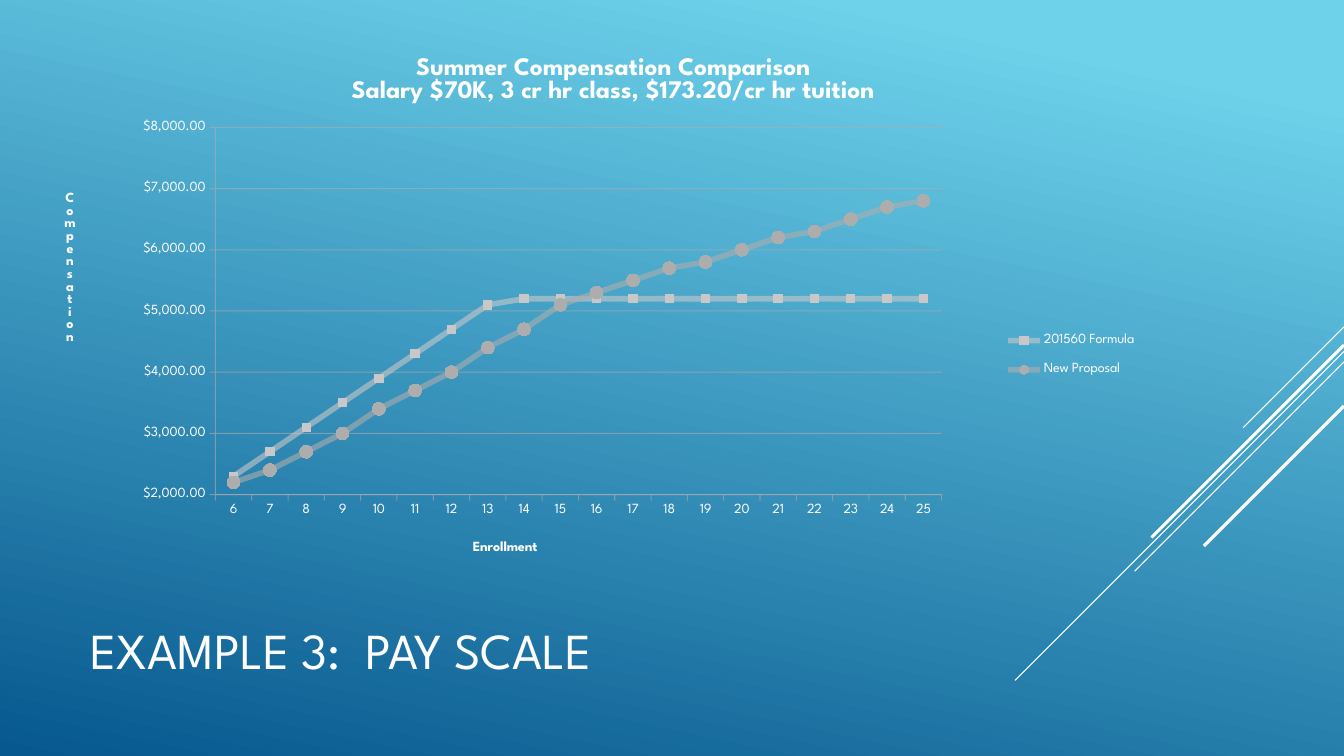
"""Build the pay scale slide with its summer compensation line chart."""
from lxml.etree import SubElement
from pptx import Presentation
from pptx.chart.data import CategoryChartData
from pptx.dml.color import RGBColor
from pptx.enum.chart import XL_CHART_TYPE as CT, XL_LEGEND_POSITION as LP
from pptx.enum.chart import XL_MARKER_STYLE as MS, XL_TICK_MARK as TM
from pptx.enum.shapes import MSO_CONNECTOR
from pptx.enum.text import MSO_ANCHOR, MSO_AUTO_SIZE, PP_ALIGN
from pptx.oxml.ns import qn
from pptx.util import Pt

FONT = "League Spartan"
WHITE = RGBColor(0xFF, 0xFF, 0xFF)
SKY = RGBColor(0x6E, 0xD2, 0xEB)
NAVY = RGBColor(0x06, 0x58, 0x8E)
SILVER = RGBColor(0xC8, 0xC8, 0xC8)
GRAY = RGBColor(0xAD, 0xAD, 0xAD)


def set_font(font, size, bold=False):
    font.name, font.size, font.bold = FONT, Pt(size), bold
    font.color.rgb = WHITE


def place(el, **fractions):
    old = el.find(qn("c:layout"))
    if old is not None:
        el.remove(old)
    is_plot = el.tag == qn("c:plotArea")
    layout = SubElement(el, qn("c:layout"))
    el.insert(0 if is_plot else 1, layout)
    manual = SubElement(layout, qn("c:manualLayout"))
    if is_plot:
        SubElement(manual, qn("c:layoutTarget")).set("val", "inner")
    for key in ("x", "y"):
        SubElement(manual, qn(f"c:{key}Mode")).set("val", "edge")
    for key, value in fractions.items():
        SubElement(manual, qn(f"c:{key}")).set("val", str(value))


prs = Presentation()
prs.slide_width, prs.slide_height = Pt(960), Pt(540)
s = prs.slides.add_slide(prs.slide_layouts[5])

fill = s.background.fill
fill.gradient()
fill.gradient_angle = 360 - 102
for stop, color, position in zip(fill.gradient_stops, (SKY, NAVY), (0.1, 1)):
    stop.color.rgb, stop.position = color, position

for top, run, width in ((233.5, 72, 0.75), (251, 235, 0.75), (258.5, 149.5, 0.75),
                        (246.5, 137.5, 2.25), (290, 100, 2.25)):
    line = s.shapes.add_connector(MSO_CONNECTOR.STRAIGHT, Pt(960), Pt(top),
                                  Pt(960 - run), Pt(top + run))
    line.line.color.rgb, line.line.width = WHITE, Pt(width)
    SubElement(line.element.spPr, qn("a:effectLst"))

title = s.shapes.title
title.left, title.top, title.width, title.height = Pt(57.5), Pt(431), Pt(672), Pt(65)
tf = title.text_frame
tf.text = "EXAMPLE 3:  PAY SCALE"
tf.auto_size = MSO_AUTO_SIZE.NONE
tf.vertical_anchor = MSO_ANCHOR.MIDDLE
tf.paragraphs[0].alignment = PP_ALIGN.LEFT
set_font(tf.paragraphs[0].font, 36)

data = CategoryChartData(number_format='"$"#,##0.00')
data.categories = [str(n) for n in range(6, 26)]
data.add_series("201560 Formula", [2300, 2700, 3100, 3500, 3900, 4300, 4700, 5100]
                + [5200] * 12)
data.add_series("New Proposal", [2200, 2400, 2700, 3000, 3400, 3700, 4000, 4400, 4700, 5100,
                                 5300, 5500, 5700, 5800, 6000, 6200, 6300, 6500, 6700, 6800])
chart = s.shapes.add_chart(CT.LINE_MARKERS, Pt(29.5), Pt(24), Pt(813), Pt(383), data).chart
set_font(chart.font, 10)
plot_area = chart.element.find(".//" + qn("c:plotArea"))
place(plot_area, x=0.153, y=0.175, w=0.638, h=0.685)

cat_axis, val_axis = chart.category_axis, chart.value_axis
val_axis.minimum_scale, val_axis.maximum_scale, val_axis.major_unit = 2000, 8000, 1000
val_axis.has_major_gridlines = True
val_axis.tick_labels.number_format = '"$"#,##0.00'
val_axis.tick_labels.number_format_is_linked = False
for axis in (cat_axis, val_axis):
    axis.major_tick_mark = TM.OUTSIDE
for fmt in (cat_axis.format, val_axis.format, val_axis.major_gridlines.format):
    fmt.line.color.rgb, fmt.line.width = GRAY, Pt(0.75)

heading = "Summer Compensation Comparison\nSalary $70K, 3 cr hr class, $173.20/cr hr tuition"
for label, text, size, x, y in ((chart.chart_title, heading, 18, 0.27, 0.035),
                                (cat_axis.axis_title, "Enrollment", 10, 0.377, 0.94),
                                (val_axis.axis_title, "Compensation", 10, 0.018, 0.29)):
    label.text_frame.text = text
    for p in label.text_frame.paragraphs:
        set_font(p.font, size, True)
    place(label.element, x=x, y=y)
body = val_axis.axis_title.element.find(".//" + qn("a:bodyPr"))
body.set("rot", "0")
body.set("vert", "wordArtVert")

chart.has_legend = True
chart.legend.position = LP.RIGHT
chart.legend.include_in_layout = False
set_font(chart.legend.font, 10)
legend = chart.element.find(".//" + qn("c:legend"))
place(legend, x=0.835, y=0.53, w=0.14, h=0.14)

plot = chart.plots[0]
plot.vary_by_categories = False
for series, color, style, size in zip(plot.series, (SILVER, GRAY),
                                      (MS.SQUARE, MS.CIRCLE), (6, 9)):
    series.smooth = False
    series.format.line.color.rgb, series.format.line.width = color, Pt(4)
    marker = series.marker
    marker.style, marker.size = style, size
    marker.format.fill.solid()
    marker.format.fill.fore_color.rgb = color
    marker.format.line.fill.background()

for ln in plot_area.iter(qn("a:ln")):
    for clr in ln.iter(qn("a:srgbClr")):
        SubElement(clr, qn("a:alpha")).set("val", "60000")

prs.save("out.pptx")
